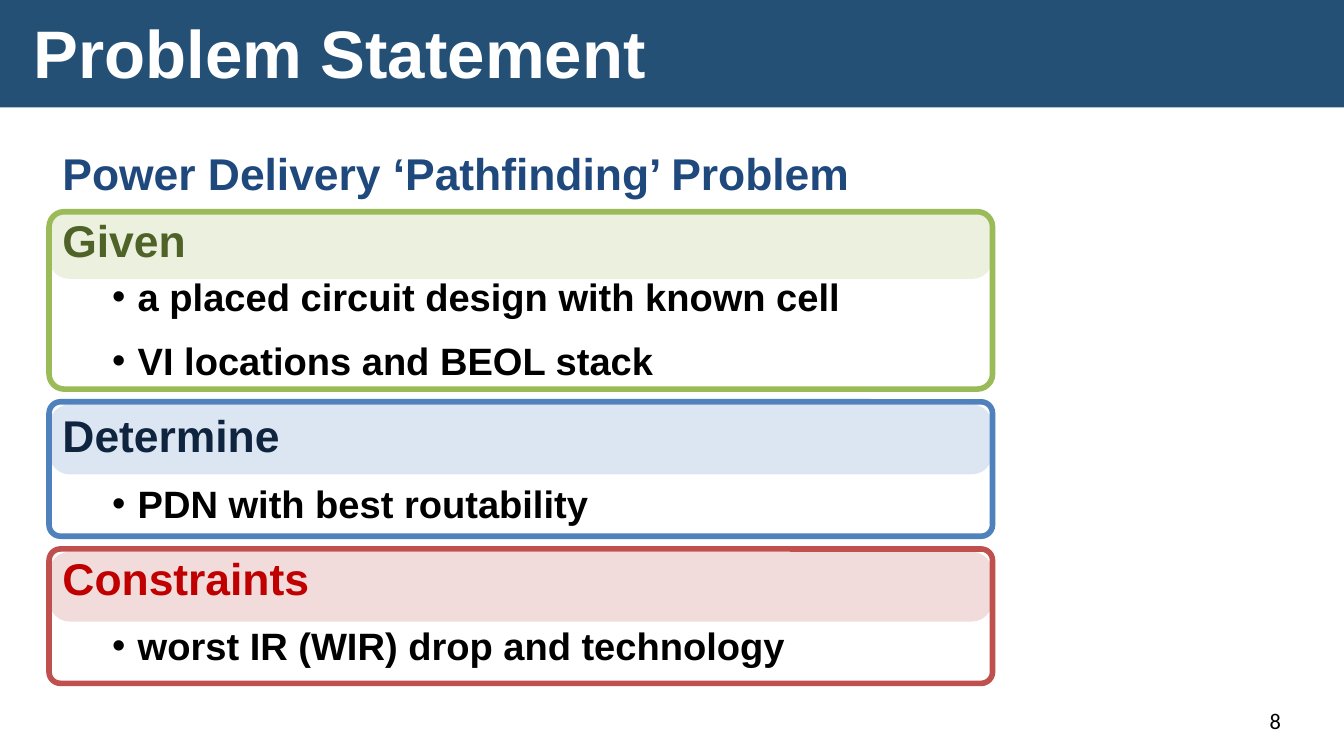
from lxml.etree import SubElement
from pptx import Presentation
from pptx.dml.color import RGBColor
from pptx.enum.shapes import MSO_SHAPE
from pptx.enum.text import MSO_ANCHOR, MSO_AUTO_SIZE, PP_ALIGN
from pptx.oxml.ns import qn
from pptx.util import Pt

PX = 4572
BAND_BLUE = RGBColor(0x25, 0x50, 0x76)
WHITE = RGBColor(0xFF, 0xFF, 0xFF)
BLACK = RGBColor(0, 0, 0)
HEADLINE_BLUE = RGBColor(0x1F, 0x49, 0x7D)
GIVEN_TEXT = RGBColor(0x4F, 0x62, 0x28)
GIVEN_FILL = RGBColor(0xEB, 0xF1, 0xDE)
GIVEN_LINE = RGBColor(0x9B, 0xBB, 0x59)
DETERMINE_TEXT = RGBColor(0x0F, 0x24, 0x3E)
DETERMINE_FILL = RGBColor(0xDC, 0xE6, 0xF2)
DETERMINE_LINE = RGBColor(0x4F, 0x81, 0xBD)
CONSTRAINTS_TEXT = RGBColor(0xC0, 0, 0)
CONSTRAINTS_FILL = RGBColor(0xF2, 0xDC, 0xDB)
CONSTRAINTS_LINE = RGBColor(0xC0, 0x50, 0x4D)

HEADING = {"line_spacing": 1.0, "space_before": Pt(7.5), "space_after": Pt(6)}
HEADLINE = HEADING | {"line_spacing": 1.3, "space_after": Pt(0)}
TIGHT_HEADING = HEADING | {"space_after": Pt(0)}
BULLET = HEADING | {"level": 1, "space_before": Pt(3.8)}

PANELS = [
    ((73, 315, 1404, 264), 0, 100, GIVEN_FILL, GIVEN_LINE),
    ((73, 598, 1404, 200), 4, 104, DETERMINE_FILL, DETERMINE_LINE),
    ((73, 817, 1404, 200), 4, 104, CONSTRAINTS_FILL, CONSTRAINTS_LINE),
]
BODY_LINES = [
    ("Power Delivery ‘Pathfinding’ Problem", HEADLINE, HEADLINE_BLUE),
    ("Given", TIGHT_HEADING, GIVEN_TEXT),
    ("a placed circuit design with known cell", BULLET, BLACK),
    ("VI locations and BEOL stack", BULLET, BLACK),
    ("Determine", HEADING, DETERMINE_TEXT),
    ("PDN with best routability", BULLET, BLACK),
    ("Constraints", HEADING, CONSTRAINTS_TEXT),
    ("worst IR (WIR) drop and technology", BULLET, BLACK),
]


def apply(target, values):
    for name, value in values.items():
        setattr(target, name, value)


def place(shape, box):
    names = ("left", "top", "width", "height")
    apply(shape, {name: value * PX for name, value in zip(names, box)})


def add_text(paragraph, text, size, color, bold=True, name="Arial"):
    run = paragraph.add_run()
    run.text = text
    apply(run.font, {"size": Pt(size), "bold": bold, "name": name})
    run.font.color.rgb = color


def add_box(slide, kind, box, fill=None, line=None, corner=None):
    shape = slide.shapes.add_shape(kind, *(value * PX for value in box))
    shape.shadow.inherit = False
    if corner is not None:
        shape.adjustments[0] = corner
    if fill is None:
        shape.fill.background()
    else:
        shape.fill.solid()
        shape.fill.fore_color.rgb = fill
    if line is None:
        shape.line.fill.background()
    else:
        shape.line.color.rgb = line
        shape.line.width = Pt(3)


def add_panel(slide, box, offset, band_height, fill, line):
    left, top, width, height = box
    band = (left, top + offset, width, band_height)
    add_box(slide, MSO_SHAPE.ROUNDED_RECTANGLE, band, fill=fill, corner=0.297)
    add_box(slide, MSO_SHAPE.ROUNDED_RECTANGLE, box, line=line, corner=0.085)


def bring_to_front(shape):
    shape.element.getparent().append(shape.element)


def add_title(slide, box):
    left, top, width, height = box
    add_box(slide, MSO_SHAPE.RECTANGLE, box, fill=BAND_BLUE)
    title = slide.shapes.title
    place(title, (left + 30, top + 21, width - 60, height - 34))
    bring_to_front(title)
    apply(title.text_frame, {
        "word_wrap": False,
        "auto_size": MSO_AUTO_SIZE.NONE,
        "vertical_anchor": MSO_ANCHOR.MIDDLE,
    })
    paragraph = title.text_frame.paragraphs[0]
    apply(paragraph, {"alignment": PP_ALIGN.LEFT, "line_spacing": 0.9})
    add_text(paragraph, "Problem Statement", 36, WHITE)


def set_bullet(paragraph):
    properties = paragraph._p.get_or_add_pPr()
    bulleted = paragraph.level == 1
    properties.set("marL", str(112 * PX if bulleted else 0))
    properties.set("indent", str(-38 * PX if bulleted else 0))
    if bulleted:
        SubElement(properties, qn("a:buFont")).set("typeface", "Arial")
        SubElement(properties, qn("a:buChar")).set("char", "•")
    else:
        SubElement(properties, qn("a:buNone"))


def add_body(slide, box):
    body = slide.placeholders[1]
    place(body, box)
    bring_to_front(body)
    frame = body.text_frame
    apply(frame, {
        "word_wrap": True,
        "auto_size": MSO_AUTO_SIZE.NONE,
        "vertical_anchor": MSO_ANCHOR.TOP,
    })
    for index, (text, values, color) in enumerate(BODY_LINES):
        paragraph = frame.add_paragraph() if index else frame.paragraphs[0]
        apply(paragraph, values)
        set_bullet(paragraph)
        add_text(paragraph, text, 20.4 if paragraph.level else 23.8, color)


def add_page_number(slide, box):
    text_box = slide.shapes.add_textbox(*(value * PX for value in box))
    frame = text_box.text_frame
    apply(frame, {"word_wrap": True, "vertical_anchor": MSO_ANCHOR.BOTTOM})
    paragraph = frame.paragraphs[0]
    paragraph.alignment = PP_ALIGN.RIGHT
    add_text(paragraph, "8", 12, BLACK, bold=False, name="Calibri")


def main():
    presentation = Presentation()
    apply(presentation, {"slide_width": 2000 * PX, "slide_height": 1125 * PX})
    slide = presentation.slides.add_slide(presentation.slide_layouts[1])
    for panel in PANELS:
        add_panel(slide, *panel)
    add_title(slide, (0, 0, 2000, 160))
    add_body(slide, (73, 183, 1852, 830))
    add_page_number(slide, (1412, 1042, 514, 60))
    presentation.save("out.pptx")


if __name__ == "__main__":
    main()
